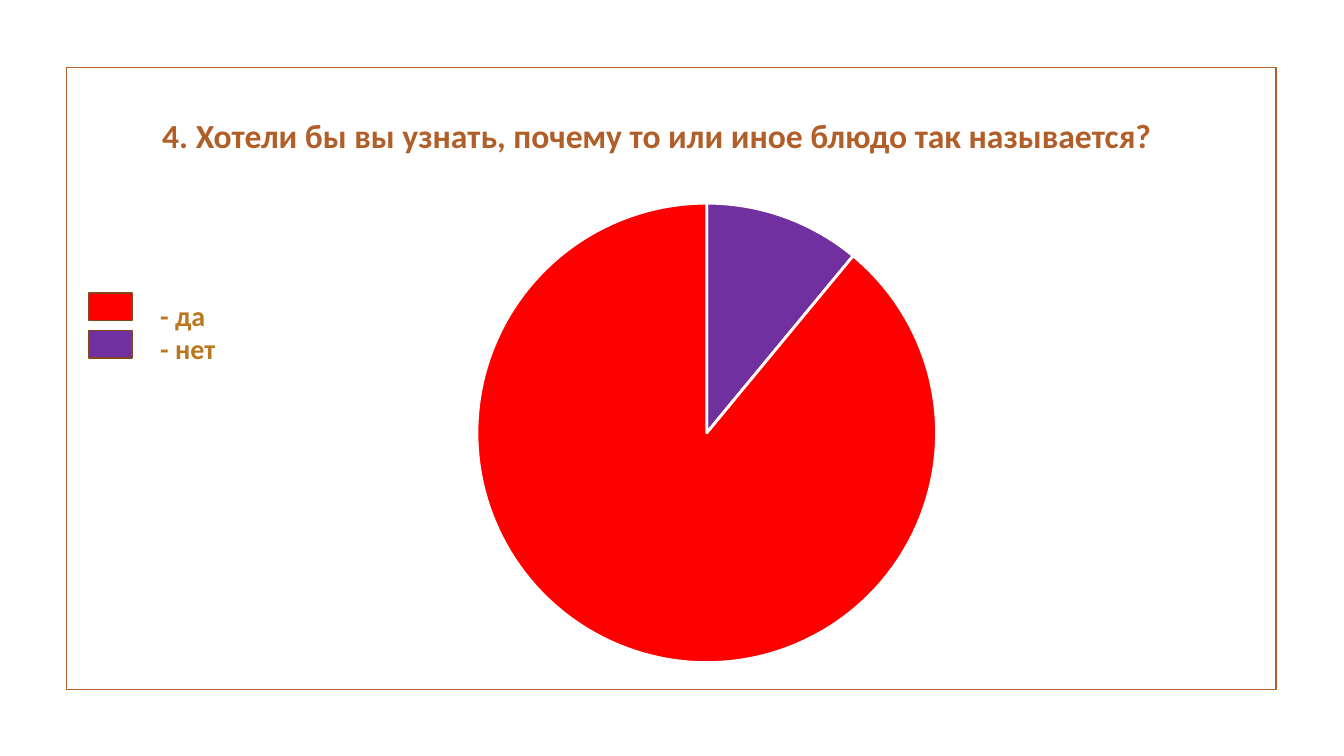
import lxml.etree
import pptx
import pptx.chart.data
import pptx.dml.color
import pptx.enum.chart
import pptx.enum.shapes
import pptx.enum.text
import pptx.oxml.ns
import pptx.util

RGBColor = pptx.dml.color.RGBColor
WHITE = RGBColor(0xFF, 0xFF, 0xFF)
BLACK = RGBColor(0, 0, 0)
RED = RGBColor(0xFF, 0, 0)
PURPLE = RGBColor(0x70, 0x30, 0xA0)
RUST = RGBColor(0xB1, 0x5E, 0x28)
BROWN = RGBColor(0x83, 0x46, 0x1E)
OCHRE = RGBColor(0xBA, 0x78, 0x1E)

FONT = "Calibri"
QUESTION = "4. Хотели бы вы узнать, почему то или иное блюдо так называется?"
LEGEND = [("- да", RED), ("- нет", PURPLE)]
ANSWERS = [("1", 11, PURPLE), ("2", 89, RED)]

SLIDE_WIDTH, SLIDE_HEIGHT = 13.33, 7.5
FRAME = (0.66, 0.67, 12, 6.17)
QUESTION_BOX = (1.13, 1.09, 10.77, 0.5)
PIE_BOX = (2.9, 1.87, 8.22, 4.85)
PIE_SHARES = {"x": 0.22, "y": 0.03, "w": 0.56, "h": 0.94}
LEGEND_LEFT, LEGEND_TOP, LEGEND_STEP = 0.88, 2.91, 0.37
SWATCH_WIDTH, SWATCH_HEIGHT = 0.43, 0.27
LEGEND_TEXT_BOX = (1.49, LEGEND_TOP, 0.94, 0.77)


def inches(box):
    return [pptx.util.Inches(length) for length in box]


def add_rectangle(slide, box, line, fill=None):
    rectangle = slide.shapes.add_shape(
        pptx.enum.shapes.MSO_SHAPE.RECTANGLE, *inches(box))
    rectangle.shadow.inherit = False
    if fill is None:
        rectangle.fill.background()
    else:
        rectangle.fill.solid()
        rectangle.fill.fore_color.rgb = fill
    rectangle.line.color.rgb = line
    rectangle.line.width = pptx.util.Pt(1.25)


def add_text(slide, box, lines, size, color, align):
    frame = slide.shapes.add_textbox(*inches(box)).text_frame
    frame.word_wrap = True
    frame.auto_size = pptx.enum.text.MSO_AUTO_SIZE.SHAPE_TO_FIT_TEXT
    frame.text = "\n".join(lines)
    for paragraph in frame.paragraphs:
        paragraph.alignment = align
        for run in paragraph.runs:
            run.font.name = FONT
            run.font.size = pptx.util.Pt(size)
            run.font.bold = True
            run.font.color.rgb = color


def place_plot(chart, shares):
    qn = pptx.oxml.ns.qn
    plot_area = chart.element.find(".//" + qn("c:plotArea"))
    for old_layout in plot_area.findall(qn("c:layout")):
        plot_area.remove(old_layout)
    layout = lxml.etree.Element(qn("c:layout"))
    manual = lxml.etree.SubElement(layout, qn("c:manualLayout"))
    settings = {"layoutTarget": "inner", "xMode": "edge", "yMode": "edge", **shares}
    for tag, value in settings.items():
        lxml.etree.SubElement(manual, qn("c:" + tag)).set("val", str(value))
    plot_area.insert(0, layout)


def add_pie(slide):
    answers = pptx.chart.data.CategoryChartData()
    answers.categories = [name for name, share, color in ANSWERS]
    answers.add_series("Series 1", [share for name, share, color in ANSWERS])
    chart = slide.shapes.add_chart(
        pptx.enum.chart.XL_CHART_TYPE.PIE, *inches(PIE_BOX), answers).chart
    chart.has_title = False
    chart.has_legend = False
    chart.font.name = FONT
    chart.font.size = pptx.util.Pt(10)
    chart.font.color.rgb = BLACK
    pie = chart.plots[0]
    pie.vary_by_categories = True
    for index, (name, share, color) in enumerate(ANSWERS):
        slice_format = pie.series[0].points[index].format
        slice_format.fill.solid()
        slice_format.fill.fore_color.rgb = color
        slice_format.line.color.rgb = WHITE
        slice_format.line.width = pptx.util.Pt(2)
    place_plot(chart, PIE_SHARES)


def main():
    deck = pptx.Presentation()
    deck.slide_width, deck.slide_height = inches((SLIDE_WIDTH, SLIDE_HEIGHT))
    slide = deck.slides.add_slide(deck.slide_layouts[6])
    align = pptx.enum.text.PP_ALIGN

    add_rectangle(slide, FRAME, line=RUST)
    add_pie(slide)
    add_text(slide, QUESTION_BOX, [QUESTION], size=24, color=RUST, align=align.CENTER)
    for row, (label, color) in enumerate(LEGEND):
        swatch = (LEGEND_LEFT, LEGEND_TOP + row * LEGEND_STEP, SWATCH_WIDTH, SWATCH_HEIGHT)
        add_rectangle(slide, swatch, line=BROWN, fill=color)
    add_text(slide, LEGEND_TEXT_BOX, [label for label, color in LEGEND],
             size=20, color=OCHRE, align=align.LEFT)

    deck.save("out.pptx")


if __name__ == "__main__":
    main()
